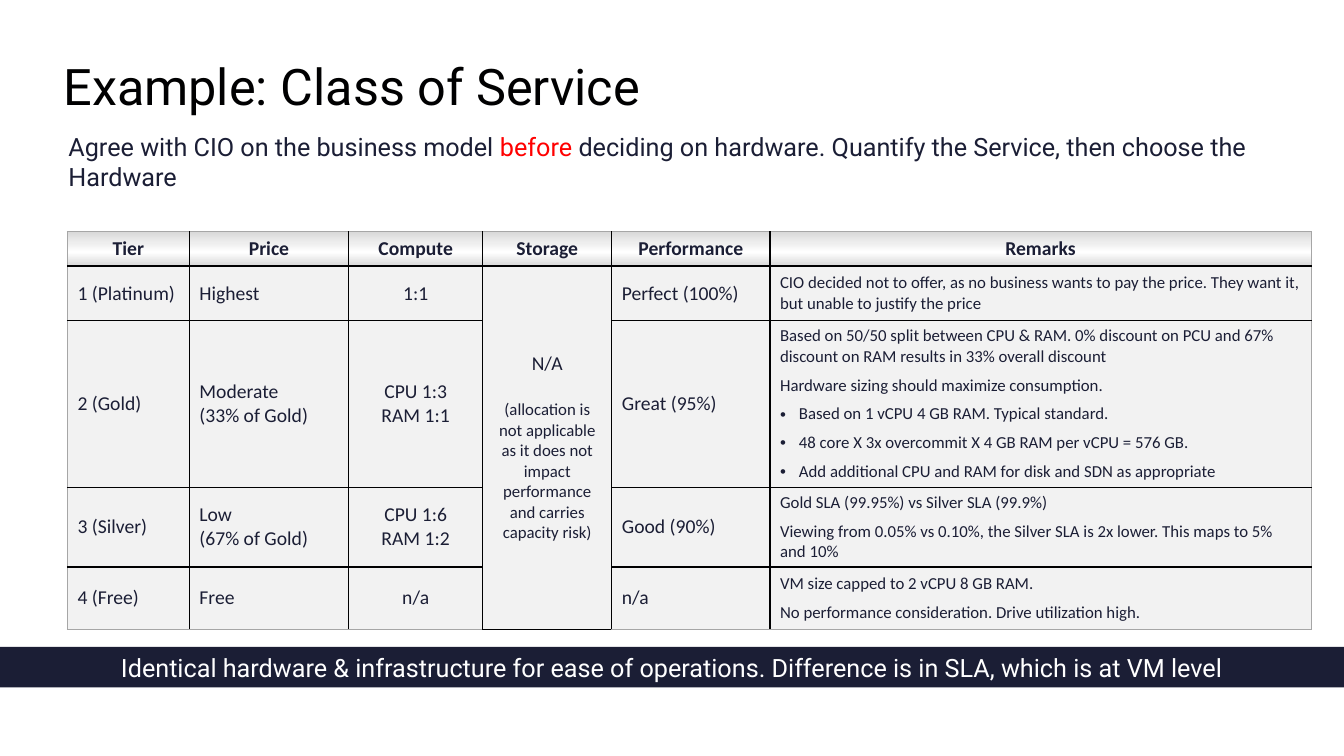
import dataclasses

import lxml.etree
import pptx
import pptx.dml.color
import pptx.enum.shapes
import pptx.enum.text
import pptx.oxml
import pptx.oxml.ns
import pptx.util

Pt = pptx.util.Pt
Align = pptx.enum.text.PP_ALIGN
Anchor = pptx.enum.text.MSO_ANCHOR
qn = pptx.oxml.ns.qn


@dataclasses.dataclass(frozen=True)
class Theme:
    heading_font: str = "Roboto"
    table_font: str = "Calibri"
    black: str = "000001"
    navy: str = "1B1E35"
    red: str = "FF0000"
    white: str = "FFFFFF"
    cell: str = "F2F2F2"
    header_edge: str = "D9D9D9"
    outline: str = "A6A6A6"
    title_size: float = 36
    lead_size: float = 18
    cell_size: float = 14
    remark_size: float = 12


THEME = Theme()

HEADERS = ["Tier", "Price", "Compute", "Storage", "Performance", "Remarks"]
COLUMN_WIDTHS = [87.1, 113.8, 95.8, 92.2, 113, 386.6]
ROW_HEIGHTS = [24.5, 39, 119, 57, 44.5]
CENTRED = {"Compute", "Storage"}
BULLET = "•"

# One entry per tier; each cell is a list of paragraphs
TIERS = [
    [["1 (Platinum)"], ["Highest"], ["1:1"], [], ["Perfect (100%)"],
     ["CIO decided not to offer, as no business wants to pay the price. "
      "They want it, but unable to justify the price"]],
    [["2 (Gold)"], ["Moderate \n(33% of Gold)"], ["CPU 1:3", "RAM 1:1"], [], ["Great (95%)"],
     ["Based on 50/50 split between CPU & RAM. 0% discount on PCU and 67% "
      "discount on RAM results in 33% overall discount",
      "Hardware sizing should maximize consumption.",
      BULLET + "Based on 1 vCPU 4 GB RAM. Typical standard.",
      BULLET + "48 core X 3x overcommit X 4 GB RAM per vCPU = 576 GB.",
      BULLET + "Add additional CPU and RAM for disk and SDN as appropriate"]],
    [["3 (Silver)"], ["Low \n(67% of Gold)"], ["CPU 1:6", "RAM 1:2"], [], ["Good (90%)"],
     ["Gold SLA (99.95%) vs Silver SLA (99.9%)",
      "Viewing from 0.05% vs 0.10%, the Silver SLA is 2x lower. This maps to 5% and 10%"]],
    [["4 (Free)"], ["Free"], ["n/a"], [], ["n/a"],
     ["VM size capped to 2 vCPU 8 GB RAM.",
      "No performance consideration. Drive utilization high."]],
]
STORAGE_NOTE = ("(allocation is not applicable as it does not impact "
                "performance and carries capacity risk)")


def add_span(para, text, font, size, color, bold=False):
    for index, line in enumerate(text.split("\n")):
        if index:
            para.add_line_break()
        span = para.add_run()
        span.text = line
        span.font.name = font
        span.font.size = Pt(size)
        span.font.bold = bold
        span.font.color.rgb = pptx.dml.color.RGBColor.from_string(color)


def next_para(frame, first):
    return frame.paragraphs[0] if first else frame.add_paragraph()


def add_text_box(page, box):
    frame = page.shapes.add_textbox(*map(Pt, box)).text_frame
    frame.word_wrap = True
    return frame


def add_title(page, box):
    frame = add_text_box(page, box)
    frame.margin_left = frame.margin_right = frame.margin_top = frame.margin_bottom = 0
    frame.vertical_anchor = Anchor.BOTTOM
    para = frame.paragraphs[0]
    para.line_spacing = 0.9
    add_span(para, "Example: Class of Service", THEME.heading_font, THEME.title_size, THEME.black)


def add_lead(page, box):
    para = add_text_box(page, box).paragraphs[0]
    for text, color in [
        ("Agree with CIO on the business model ", THEME.navy),
        ("before", THEME.red),
        (" deciding on hardware. Quantify the Service, then choose the Hardware", THEME.navy),
    ]:
        add_span(para, text, THEME.heading_font, THEME.lead_size, color)


def add_banner(page, box):
    banner = page.shapes.add_shape(pptx.enum.shapes.MSO_SHAPE.RECTANGLE, *map(Pt, box))
    banner.shadow.inherit = False
    banner.fill.solid()
    banner.fill.fore_color.rgb = pptx.dml.color.RGBColor.from_string(THEME.navy)
    banner.line.fill.background()
    banner.text_frame.vertical_anchor = Anchor.MIDDLE
    para = banner.text_frame.paragraphs[0]
    para.alignment = Align.CENTER
    add_span(para, "Identical hardware & infrastructure for ease of operations. "
             "Difference is in SLA, which is at VM level",
             THEME.heading_font, THEME.lead_size, THEME.white)


# Table parts
def add_element(parent, tag, **attributes):
    return lxml.etree.SubElement(parent, qn(tag), attributes)


def add_color(parent, color):
    add_element(add_element(parent, "a:solidFill"), "a:srgbClr", val=color)


def style_cell(cell, row, column):
    """Borders come first in the cell properties, then the fill."""
    cell.vertical_anchor = Anchor.MIDDLE
    properties = cell._tc.get_or_add_tcPr()
    last_row, last_column = len(ROW_HEIGHTS) - 1, len(COLUMN_WIDTHS) - 1
    sides = {"a:lnL": column == 0, "a:lnR": column == last_column,
             "a:lnT": row == 0, "a:lnB": row == last_row}
    for tag, outer in sides.items():
        under_header = (row, tag) in [(0, "a:lnB"), (1, "a:lnT")]
        line = add_element(properties, tag, w=str(Pt(1.5 if under_header else 1)))
        add_color(line, THEME.outline if outer else THEME.black)
    if row:
        add_color(properties, THEME.cell)
        return
    gradient = add_element(properties, "a:gradFill", rotWithShape="1")
    stops = add_element(gradient, "a:gsLst")
    for percent, color in [(0, THEME.header_edge), (59, THEME.white), (100, THEME.header_edge)]:
        stop = add_element(stops, "a:gs", pos=str(percent * 1000))
        add_element(stop, "a:srgbClr", val=color)
    add_element(gradient, "a:lin", ang="5400000", scaled="0")


def fill_remarks(frame, remarks):
    for index, text in enumerate(remarks):
        para = next_para(frame, index == 0)
        if text.startswith(BULLET):
            indent = Pt(13.5)
            properties = para._p.get_or_add_pPr()
            properties.set("marL", str(indent))
            properties.set("indent", str(-indent))
            add_element(properties, "a:buFont", typeface="Arial")
            add_element(properties, "a:buChar", char=BULLET)
        if index:
            para.space_before = Pt(6)
        add_span(para, text.removeprefix(BULLET), THEME.table_font, THEME.remark_size, THEME.navy)


def fill_cell(frame, texts, centred, bold=False):
    for index, text in enumerate(texts):
        para = next_para(frame, index == 0)
        para.alignment = Align.CENTER if centred else Align.LEFT
        add_span(para, text, THEME.table_font, THEME.cell_size, THEME.navy, bold)


def add_tier_table(page, box):
    table = page.shapes.add_table(len(ROW_HEIGHTS), len(HEADERS), *map(Pt, box)).table
    table.horz_banding = False
    for column, width in zip(table.columns, COLUMN_WIDTHS):
        column.width = Pt(width)
    for row, height in zip(table.rows, ROW_HEIGHTS):
        row.height = Pt(height)

    for row, texts in enumerate([[[name] for name in HEADERS]] + TIERS):
        for column, header in enumerate(HEADERS):
            cell = table.cell(row, column)
            style_cell(cell, row, column)
            if row and header == "Remarks":
                fill_remarks(cell.text_frame, texts[column])
            else:
                fill_cell(cell.text_frame, texts[column], row == 0 or header in CENTRED, row == 0)

    # Storage answer shared by all tiers
    storage = HEADERS.index("Storage")
    shared = table.cell(1, storage)
    shared.merge(table.cell(len(TIERS), storage))
    fill_cell(shared.text_frame, ["N/A"], True)
    note = shared.text_frame.add_paragraph()
    note.alignment = Align.CENTER
    note.space_before = Pt(17)
    add_span(note, STORAGE_NOTE, THEME.table_font, THEME.remark_size, THEME.navy)


def main():
    deck = pptx.Presentation()
    deck.slide_width, deck.slide_height = Pt(960), Pt(540)
    page = deck.slides.add_slide(deck.slide_layouts[6])
    add_title(page, (45.4, 32.4, 866, 51))
    add_tier_table(page, (48.2, 165.6, sum(COLUMN_WIDTHS), sum(ROW_HEIGHTS)))
    add_lead(page, (41.8, 90, 894, 51))
    add_banner(page, (0, 462, 960, 29))
    deck.save("out.pptx")


if __name__ == "__main__":
    main()
